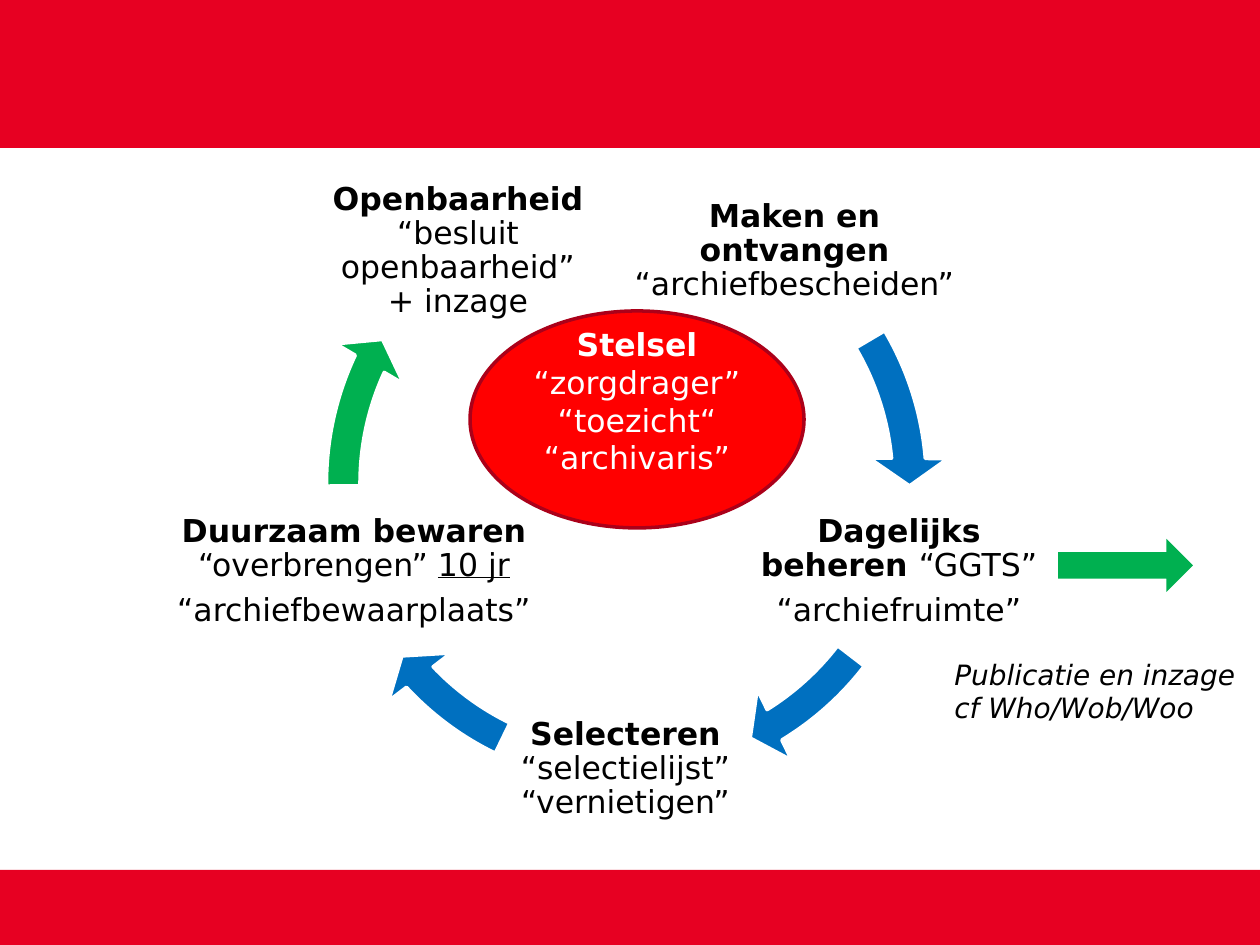
from dataclasses import dataclass

from pptx import Presentation
from pptx.dml.color import RGBColor
from pptx.enum.shapes import MSO_SHAPE
from pptx.enum.text import MSO_ANCHOR, PP_ALIGN
from pptx.util import Pt

RECTANGLE = MSO_SHAPE.RECTANGLE
OVAL = MSO_SHAPE.OVAL
RIGHT_ARROW = MSO_SHAPE.RIGHT_ARROW
CIRCULAR_ARROW = MSO_SHAPE.CIRCULAR_ARROW
MIDDLE = MSO_ANCHOR.MIDDLE
CENTER = PP_ALIGN.CENTER

EMU_PER_PX = 914400 / 126
BLANK_LAYOUT = 6


@dataclass(frozen=True)
class Theme:
    font: str = "DejaVu Sans"
    body_size: int = 18
    note_size: int = 16
    line_width: int = 2
    band: str = "E70022"
    step: str = "0070C0"
    public: str = "00B050"
    core: str = "FF0000"
    core_line: str = "AB0019"
    dark: str = "000000"
    light: str = "FFFFFF"


THEME = Theme()

BOLD = {"bold": True}
PLAIN = {"bold": False}
ITALIC = {"italic": True}
UNDERLINED = {"underline": True}

# Each stage: box, then paragraphs made of (text, style) spans
STAGES = [
    ((607, 166, 375, 171), [[("Maken en ontvangen ", BOLD), ("“archiefbescheiden”", PLAIN)]]),
    ((751, 486, 296, 171), [[("Dagelijks beheren ", BOLD), ("“GGTS”", PLAIN)],
                            [("“archiefruimte”", PLAIN)]]),
    ((500, 684, 251, 171), [[("Selecteren ", BOLD), ("“selectielijst” “vernietigen”", PLAIN)]]),
    ((164, 486, 380, 171), [[("Duurzaam bewaren ", BOLD), ("“overbrengen” ", PLAIN),
                             ("10 jr", UNDERLINED)],
                            [("“archiefbewaarplaats”", PLAIN)]]),
    ((328, 166, 260, 171), [[("Openbaarheid ", BOLD),
                             ("“besluit openbaarheid” + inzage", PLAIN)]]),
]

# Start and end angle in degrees, clockwise from three o'clock
CYCLE_ARROWS = [
    (329.42, 354.91, THEME.step),
    (37.53, 58.47, THEME.step),
    (115.93, 136.87, THEME.step),
    (179.5, 204.99, THEME.public),
]
CYCLE_BOX = (304, 161, 645, 645)


def px(length):
    return round(length * EMU_PER_PX)


def place(box):
    return [px(length) for length in box]


def add_filled(slide, kind, box, fill, line=None):
    shape = slide.shapes.add_shape(kind, *place(box))
    shape.shadow.inherit = False
    shape.fill.solid()
    shape.fill.fore_color.rgb = RGBColor.from_string(fill)
    if line:
        shape.line.color.rgb = RGBColor.from_string(line)
        shape.line.width = Pt(THEME.line_width)
    else:
        shape.line.fill.background()
    return shape


def add_cycle_arrow(slide, start, end, color):
    arrow = add_filled(slide, CIRCULAR_ARROW, CYCLE_BOX, color, THEME.light)
    thickness, head_angle, head_width = 5.2, 5.59, 6.1
    # Angles are stored in 1/60000 degree, adjustments in 1/100000
    values = (thickness / 100, head_angle * 0.6, end * 0.6, start * 0.6, head_width / 100)
    for index, value in enumerate(values):
        arrow.adjustments[index] = value


def write(frame, paragraphs, size, color, align=None):
    """Fill a text frame with paragraphs of styled spans."""
    frame.word_wrap = True
    for index, spans in enumerate(paragraphs):
        para = frame.add_paragraph() if index else frame.paragraphs[0]
        para.alignment = align
        for text, style in spans:
            span = para.add_run()
            span.text = text
            span.font.name = THEME.font
            span.font.size = Pt(size)
            span.font.color.rgb = RGBColor.from_string(color)
            for name, value in style.items():
                setattr(span.font, name, value)


def add_stage(slide, box, paragraphs):
    frame = slide.shapes.add_textbox(*place(box)).text_frame
    frame.vertical_anchor = MIDDLE
    frame.margin_left = frame.margin_right = px(4)
    frame.margin_top = frame.margin_bottom = px(4)
    write(frame, paragraphs, THEME.body_size, THEME.dark, CENTER)
    for para in frame.paragraphs:
        para.line_spacing = 0.9
        para.space_after = Pt(6.3)


def add_core(slide):
    core = add_filled(slide, OVAL, (470, 311, 334, 217), THEME.core, THEME.core_line)
    frame = core.text_frame
    frame.vertical_anchor = MIDDLE
    frame.margin_bottom = px(44)
    terms = ["“zorgdrager”", "“toezicht“", "“archivaris”"]
    paragraphs = [[("Stelsel", BOLD)]] + [[(term, PLAIN)] for term in terms]
    write(frame, paragraphs, THEME.body_size, THEME.light, CENTER)


def add_publication(slide):
    add_filled(slide, RIGHT_ARROW, (1058, 539, 135, 53), THEME.public)
    note = slide.shapes.add_textbox(*place((942, 651, 314, 81)))
    lines = ["Publicatie en inzage", "cf Who/Wob/Woo"]
    write(note.text_frame, [[(line, ITALIC)] for line in lines],
          THEME.note_size, THEME.dark)


def main():
    deck = Presentation()
    deck.slide_width, deck.slide_height = px(1260), px(945)
    slide = deck.slides.add_slide(deck.slide_layouts[BLANK_LAYOUT])
    for top, height in ((0, 148), (870, 75)):
        add_filled(slide, RECTANGLE, (0, top, 1260, height), THEME.band)
    for start, end, color in CYCLE_ARROWS:
        add_cycle_arrow(slide, start, end, color)
    for box, paragraphs in STAGES:
        add_stage(slide, box, paragraphs)
    add_publication(slide)
    add_core(slide)
    deck.save("out.pptx")


if __name__ == "__main__":
    main()
